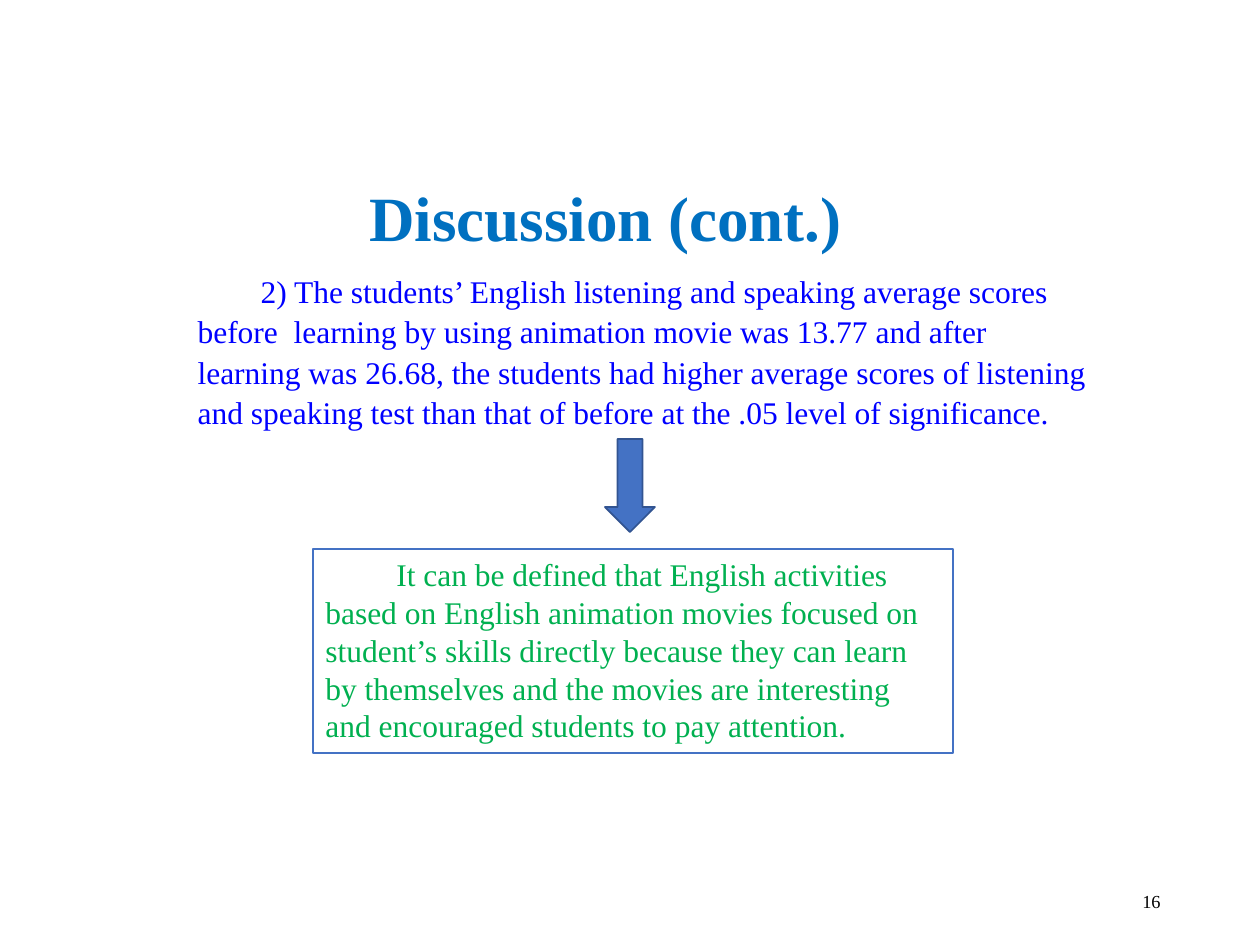
from dataclasses import dataclass
from lxml.etree import SubElement
from pptx import Presentation
from pptx.dml.color import RGBColor as RGB
from pptx.enum.shapes import MSO_SHAPE as Shape
from pptx.enum.text import MSO_ANCHOR as Anchor, MSO_AUTO_SIZE as Fit, PP_ALIGN as Align
from pptx.oxml.ns import qn
from pptx.util import Pt


@dataclass(frozen=True)
class Theme:
    face: str = "Times New Roman"
    head: str = "0070C0"
    body: str = "0000FF"
    note: str = "00B050"
    ink: str = "000000"
    paper: str = "FFFFFF"
    blue: str = "4472C4"
    edge: str = "325491"
    big: float = 36
    mid: float = 18
    small: float = 10.5


T = Theme()
SCALE = 914400 / 126


def px(n):
    return round(n * SCALE)


def place(box, x, y, w, h):
    box.left, box.top, box.width, box.height = map(px, (x, y, w, h))


def write(box, text, size, color, bold=False, align=Align.LEFT,
          anchor=Anchor.TOP, indent=0, lead=1.0, after=0):
    frame = box.text_frame
    frame.word_wrap = True
    frame.auto_size = Fit.NONE
    frame.vertical_anchor = anchor
    para = frame.paragraphs[0]
    props = para._p.get_or_add_pPr()
    props.set("marL", "0")
    props.set("indent", str(px(indent)))
    SubElement(props, qn("a:buNone"))
    para.alignment = align
    para.line_spacing = lead
    para.space_before = Pt(0)
    para.space_after = Pt(after)
    run = para.add_run()
    run.text = text
    font = run.font
    font.name, font.size, font.bold = T.face, Pt(size), bold
    font.color.rgb = RGB.from_string(color)


def draw(slide, kind, x, y, w, h, fill, line):
    shape = slide.shapes.add_shape(kind, *map(px, (x, y, w, h)))
    shape.shadow.inherit = False
    shape.fill.solid()
    shape.fill.fore_color.rgb = RGB.from_string(fill)
    shape.line.color.rgb = RGB.from_string(line)
    shape.line.width = Pt(1)
    return shape


def main():
    """Build the discussion slide and save it."""
    deck = Presentation()
    deck.slide_width, deck.slide_height = px(1260), px(945)
    slide = deck.slides.add_slide(deck.slide_layouts[1])

    title, body = slide.placeholders
    place(title, 159, 152, 893, 124)
    write(title, "Discussion (cont.)", T.big, T.head, bold=True,
          align=Align.CENTER, anchor=Anchor.MIDDLE, lead=1.07, after=8)
    place(body, 185, 263, 924, 176)
    write(body, "2) The students’ English listening and speaking average scores "
          "before  learning by using animation movie was 13.77 and after "
          "learning was 26.68, the students had higher average scores of "
          "listening and speaking test than that of before at the .05 level "
          "of significance.", T.mid, T.body, indent=63, lead=1.07, after=8)

    note = draw(slide, Shape.RECTANGLE, 313, 549, 640, 204, T.paper, T.blue)
    write(note, "It can be defined that English activities based on English "
          "animation movies focused on student’s skills directly because they "
          "can learn by themselves and the movies are interesting and "
          "encouraged students to pay attention.", T.mid, T.note, indent=71)
    draw(slide, Shape.DOWN_ARROW, 605, 439, 50, 93, T.blue, T.edge)

    page = slide.shapes.add_textbox(*map(px, (890, 876, 283, 50)))
    write(page, "16", T.small, T.ink, align=Align.RIGHT, anchor=Anchor.MIDDLE)
    deck.save("out.pptx")


if __name__ == "__main__":
    main()
